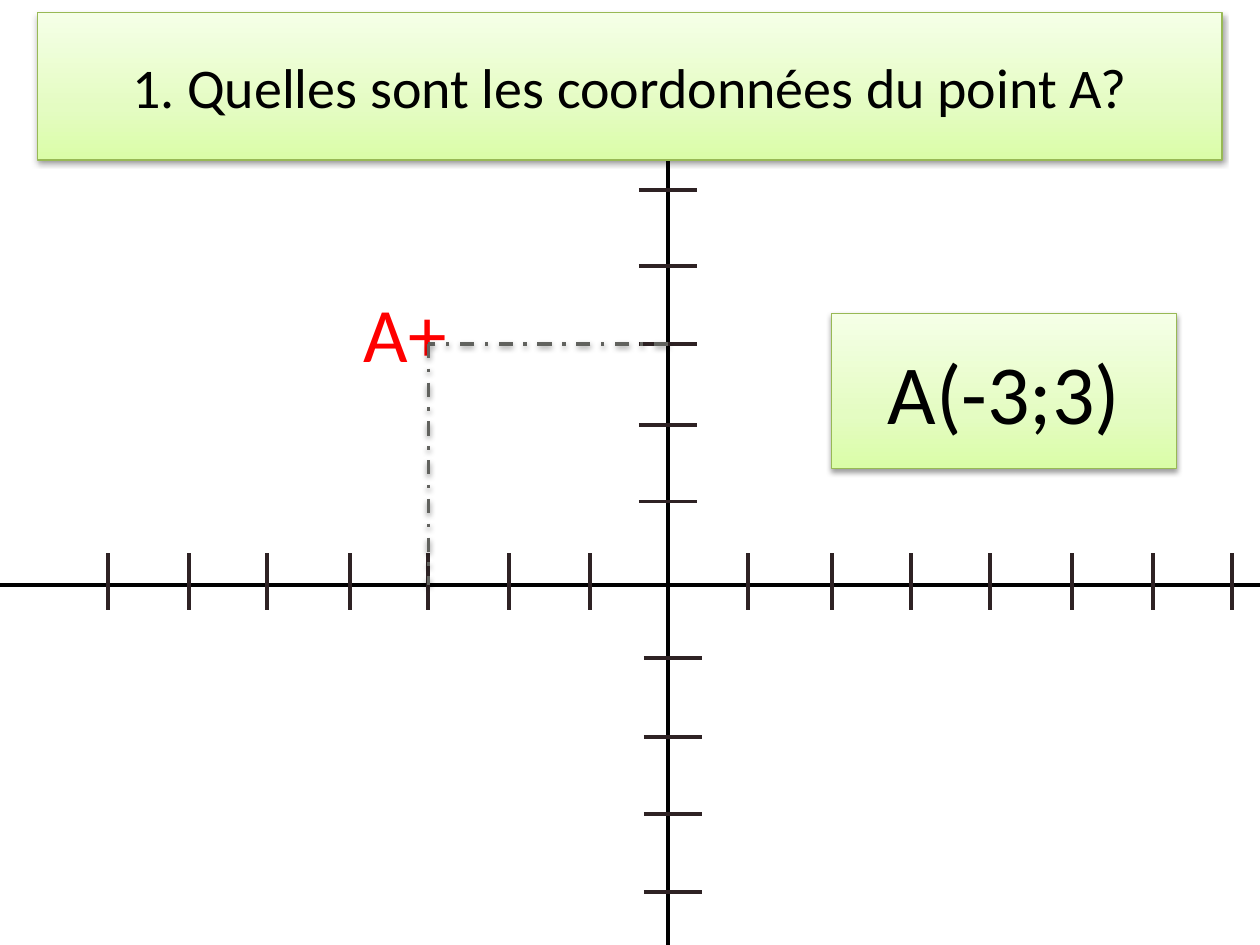
from lxml.etree import SubElement
from pptx import Presentation
from pptx.dml.color import RGBColor
from pptx.enum.dml import MSO_LINE_DASH_STYLE as Dash
from pptx.enum.shapes import MSO_CONNECTOR as Connector, MSO_SHAPE as Shape
from pptx.enum.text import MSO_ANCHOR as Anchor, MSO_AUTO_SIZE as AutoSize, PP_ALIGN as Align
from pptx.oxml.ns import qn
from pptx.util import Inches, Pt

BLACK = RGBColor(0x00, 0x00, 0x00)
RED = RGBColor(0xFF, 0x00, 0x00)
TICK = RGBColor(0x2E, 0x22, 0x24)
GUIDE = RGBColor(0x61, 0x62, 0x5E)
BORDER = RGBColor(0x98, 0xB9, 0x55)
GREENS = ((0, RGBColor(0xDA, 0xFD, 0xA7)),
          (35, RGBColor(0xE4, 0xFC, 0xC2)),
          (100, RGBColor(0xF5, 0xFF, 0xE7)))
FONT = "Calibri"

# The slide is a grid of square cells.
COLUMNS, ROWS = 100, 75
CELL = Inches(0.1)

ORIGIN_X, ORIGIN_Y = 53, 46.4
POINT_X, POINT_Y = 34, 27.3
TICK_COLUMNS = (8.6, 15, 21.2, 27.8, POINT_X, 40.4, 46.8,
                59.4, 66, 72.3, 78.6, 85.1, 91.5, 97.8)
TICK_ROWS = (15.1, 21.1, POINT_Y, 33.7, 39.8, 52.2, 58.5, 64.6, 70.8)
TICK_TOP, TICK_HEIGHT, TICK_WIDTH = 43.9, 4.5, 4.6
TICK_LEFT_ABOVE, TICK_LEFT_BELOW = 50.7, 51.1


def cells(*counts):
    return [round(count * CELL) for count in counts]


def add_effects(shape, shadow):
    """Give the shape a soft shadow below it, or none."""
    effects = SubElement(shape._element.spPr, qn("a:effectLst"))
    if shadow:
        outer = SubElement(effects, qn("a:outerShdw"), blurRad="40000", dist="20000",
                           dir="5400000", rotWithShape="0")
        color = SubElement(outer, qn("a:srgbClr"), val=str(BLACK))
        SubElement(color, qn("a:alpha"), val="38000")


def add_line(shapes, start, end, color, width=2.25, dash=None, shadow=False):
    line = shapes.add_connector(Connector.STRAIGHT, *cells(*start, *end))
    line.line.color.rgb = color
    line.line.width = Pt(width)
    if dash is not None:
        line.line.dash_style = dash
    add_effects(line, shadow)


def add_run(paragraph, text, size, color):
    run = paragraph.add_run()
    run.text = text
    run.font.name = FONT
    run.font.size = Pt(size)
    run.font.color.rgb = color


def fill_with_greens(shape):
    """Blend the greens from the bottom up."""
    shape.fill.gradient()
    shape.fill.gradient_angle = 90
    stops = shape._element.spPr.find(".//" + qn("a:gsLst"))
    stops.clear()
    for percent, color in GREENS:
        stop = SubElement(stops, qn("a:gs"), pos=str(percent * 1000))
        SubElement(stop, qn("a:srgbClr"), val=str(color))


def add_panel(slide, box, text, size):
    panel = slide.shapes.add_shape(Shape.RECTANGLE, *cells(*box))
    fill_with_greens(panel)
    panel.line.color.rgb = BORDER
    panel.line.width = Pt(0.75)
    add_effects(panel, shadow=True)
    frame = panel.text_frame
    frame.word_wrap = True
    frame.vertical_anchor = Anchor.MIDDLE
    paragraph = frame.paragraphs[0]
    paragraph.alignment = Align.CENTER
    add_run(paragraph, text, size, BLACK)


def add_axes(slide):
    shapes = slide.shapes.add_group_shape().shapes
    add_line(shapes, (0, ORIGIN_Y), (COLUMNS, ORIGIN_Y), BLACK)
    add_line(shapes, (ORIGIN_X, ROWS), (ORIGIN_X, 7.2), BLACK)
    for x in TICK_COLUMNS:
        add_line(shapes, (x, TICK_TOP), (x, TICK_TOP + TICK_HEIGHT), TICK)
    for y in TICK_ROWS:
        left = TICK_LEFT_ABOVE if y < ORIGIN_Y else TICK_LEFT_BELOW
        add_line(shapes, (left, y), (left + TICK_WIDTH, y), TICK)


def add_point_label(slide):
    label = slide.shapes.add_textbox(*cells(27.9, 22.2, 15.2, 8.4))
    frame = label.text_frame
    frame.word_wrap = True
    frame.auto_size = AutoSize.SHAPE_TO_FIT_TEXT
    add_run(frame.paragraphs[0], "A+", 44, RED)


def add_guides(slide):
    """Project the point on both axes."""
    point = (POINT_X, POINT_Y)
    for start, end in (((ORIGIN_X, POINT_Y), point), (point, (POINT_X, ORIGIN_Y))):
        add_line(slide.shapes, start, end, GUIDE, 2, Dash.DASH_DOT, shadow=True)


def main():
    presentation = Presentation()
    presentation.slide_width, presentation.slide_height = cells(COLUMNS, ROWS)
    slide = presentation.slides.add_slide(presentation.slide_layouts[6])
    add_axes(slide)
    add_point_label(slide)
    add_panel(slide, (3, 1, 94, 11.7), "1. Quelles sont les coordonnées du point A?", 32)
    add_guides(slide)
    add_panel(slide, (66, 24.9, 27.4, 12.3), "A(-3;3)", 48)
    presentation.save("out.pptx")


if __name__ == "__main__":
    main()
